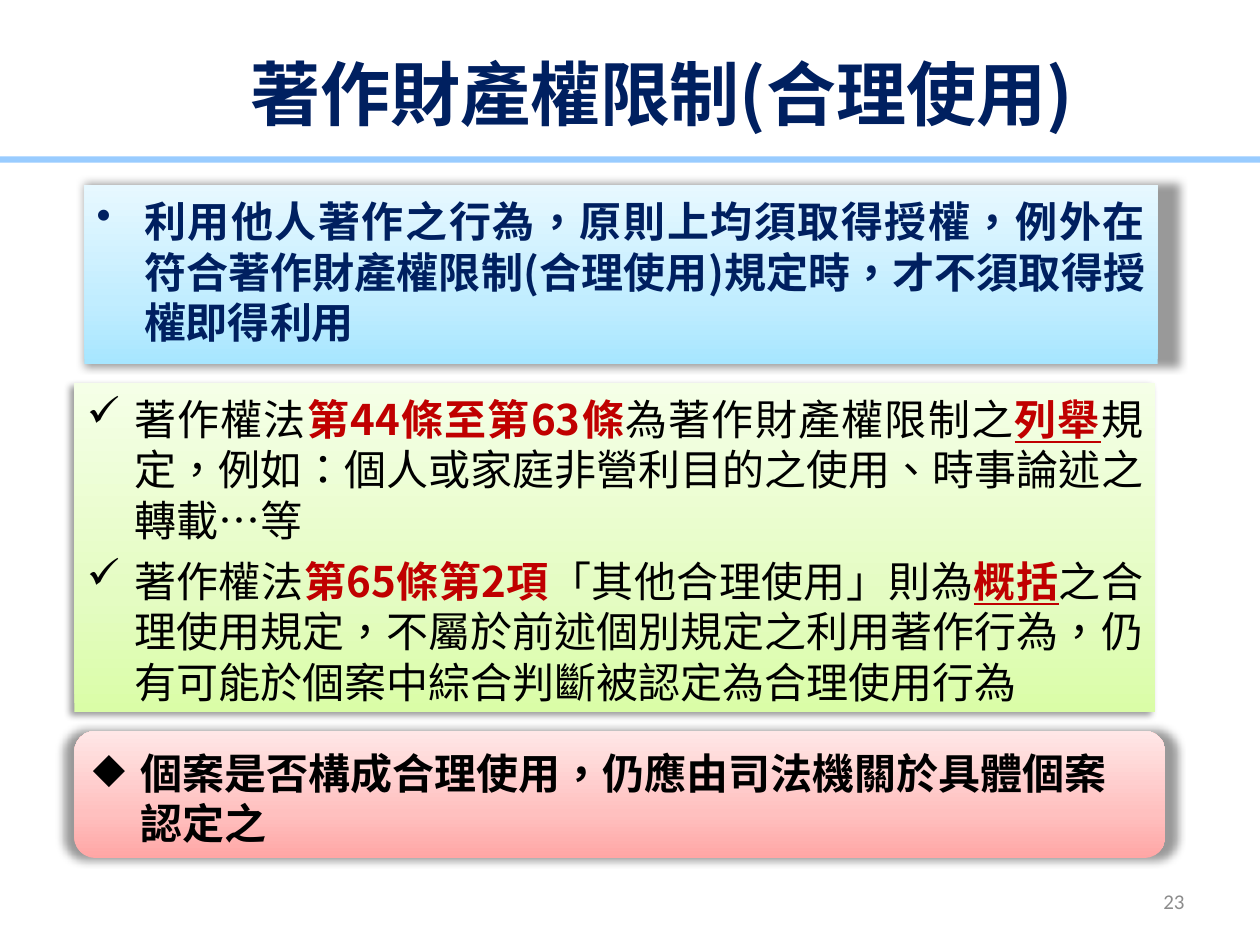
"""Build a slide on the limits of economic copyright and fair use."""
from lxml.etree import SubElement
from pptx import Presentation
from pptx.dml.color import RGBColor
from pptx.enum.shapes import MSO_SHAPE as Shape
from pptx.enum.text import MSO_ANCHOR as Anchor, PP_ALIGN as Align
from pptx.oxml import parse_xml
from pptx.oxml.ns import nsdecls, qn
from pptx.util import Pt

CJK = "Noto Sans CJK SC"
NAVY, BLACK, RED = "002060", "000000", "C00000"


def rgb(value):
    return RGBColor.from_string(value)


def write(paragraph, runs, size, face, leading, align, bullet=None):
    """Fill a paragraph with (text, colour, bold, underline) runs."""
    layout = {"alignment": align, "line_spacing": leading}
    for key, value in layout.items():
        setattr(paragraph, key, value)
    if bullet:
        props = paragraph._p.get_or_add_pPr()
        props.set("marL", str(Pt(27)))
        props.set("indent", str(-Pt(27)))
        SubElement(props, qn("a:buChar"), char=bullet)
    for text, colour, bold, underline in runs:
        run = paragraph.add_run()
        run.text = text
        style = {"size": Pt(size), "name": face, "bold": bold, "underline": underline}
        for key, value in style.items():
            setattr(run.font, key, value)
        run.font.color.rgb = rgb(colour)
        run_props = run._r.get_or_add_rPr()
        run_props.set("lang", "zh-TW")
        SubElement(run_props, qn("a:ea"), typeface=face)


deck = Presentation()
deck.slide_width, deck.slide_height = Pt(720), Pt(540)
slide = deck.slides.add_slide(deck.slide_layouts[6])
shapes = slide.shapes

rule = shapes.add_shape(Shape.RECTANGLE, Pt(-3), Pt(89.3), Pt(724), Pt(3.6))
rule.shadow.inherit = False
rule.fill.solid()
rule.fill.fore_color.rgb = rgb("99CCFF")
rule.line.fill.background()

labels = [
    ((54, 20.9, 648, 90), "著作財產權限制(合理使用)", 40, CJK, NAVY, True, Pt(48),
     Align.CENTER, Anchor.TOP, 8),
    ((516.2, 500.4, 167.8, 28.8), "23", 12, "Calibri", "8C8C8C", False, 1.0,
     Align.RIGHT, Anchor.MIDDLE, 3.6),
]
for bounds, text, size, face, colour, bold, leading, align, anchor, inset in labels:
    frame = shapes.add_textbox(*map(Pt, bounds)).text_frame
    settings = {"word_wrap": True, "vertical_anchor": anchor, "margin_top": Pt(inset)}
    for key, value in settings.items():
        setattr(frame, key, value)
    write(frame.paragraphs[0], [(text, colour, bold, False)], size, face, leading, align)

principle = [[("利用他人著作之行為，原則上均須取得授權，例外在符合著作財產權限制(合理使用)規定時，才不須取得授權即得利用",
               NAVY, True, False)]]
provisions = [
    [("著作權法", BLACK, False, False),
     ("第44條至第63條", RED, True, False),
     ("為著作財產權限制之", BLACK, False, False),
     ("列舉", RED, True, True),
     ("規定，例如：個人或家庭非營利目的之使用、時事論述之轉載…等", BLACK, False, False)],
    [("著作權法", BLACK, False, False),
     ("第65條第2項", RED, True, False),
     ("「其他合理使用」則為", BLACK, False, False),
     ("概括", RED, True, True),
     ("之合理使用規定，不屬於前述個別規定之利用著作行為，仍有可能於個案中綜合判斷被認定為合理使用行為",
      BLACK, False, False)],
]
ruling = [[("個案是否構成合理使用，仍應由司法機關於具體個案認定之", BLACK, True, False)]]

panels = [
    (Shape.RECTANGLE, (48.2, 105.8, 613.4, 102.2), ("A7E6FF", "C1EDFF", "E7F8FF"),
     (5, 0, 0, 102, "l"), "•", Align.JUSTIFY, principle),
    (Shape.RECTANGLE, (42.5, 218.9, 617.8, 187.9), ("DAFDA7", "E4FCC2", "F5FFE7"),
     (4, 3, 135, 100, "tr"), "✓", Align.JUSTIFY, provisions),
    (Shape.ROUNDED_RECTANGLE, (42.5, 417.6, 623.5, 72.7), ("FFA6A5", "FFC0BF", "FFE7E7"),
     (5, 0, 0, 102, "ctr"), "◆", Align.LEFT, ruling),
]
for outline, bounds, tints, shade, bullet, align, paragraphs in panels:
    panel = shapes.add_shape(outline, *map(Pt, bounds))
    panel.line.fill.background()
    panel.fill.gradient()
    panel.fill.gradient_angle = 90
    stops = panel._element.spPr.find(qn("a:gradFill")).find(qn("a:gsLst"))
    for stop in list(stops):
        stops.remove(stop)
    for position, tint in zip((0, 35, 100), tints):
        stop = SubElement(stops, qn("a:gs"), pos=str(position * 1000))
        SubElement(stop, qn("a:srgbClr"), val=tint)

    panel.shadow.inherit = False
    blur, distance, angle, scale, origin = shade
    panel._element.spPr.find(qn("a:effectLst")).append(parse_xml(
        f'<a:outerShdw {nsdecls("a")} blurRad="{Pt(blur)}" dist="{Pt(distance)}" '
        f'dir="{angle * 60000}" sx="{scale * 1000}" sy="{scale * 1000}" '
        f'algn="{origin}" rotWithShape="0"><a:srgbClr val="000000">'
        '<a:alpha val="40000"/></a:srgbClr></a:outerShdw>'))

    frame = panel.text_frame
    settings = {"word_wrap": True, "vertical_anchor": Anchor.TOP, "margin_top": Pt(6)}
    for key, value in settings.items():
        setattr(frame, key, value)
    for index, runs in enumerate(paragraphs):
        paragraph = frame.add_paragraph() if index else frame.paragraphs[0]
        paragraph.space_before = Pt(6 if index else 0)
        bullet_colour = runs[0][1]
        write(paragraph, runs, 24, CJK, Pt(28.8), align, bullet)
        paragraph.font.color.rgb = rgb(bullet_colour)

deck.save("out.pptx")
